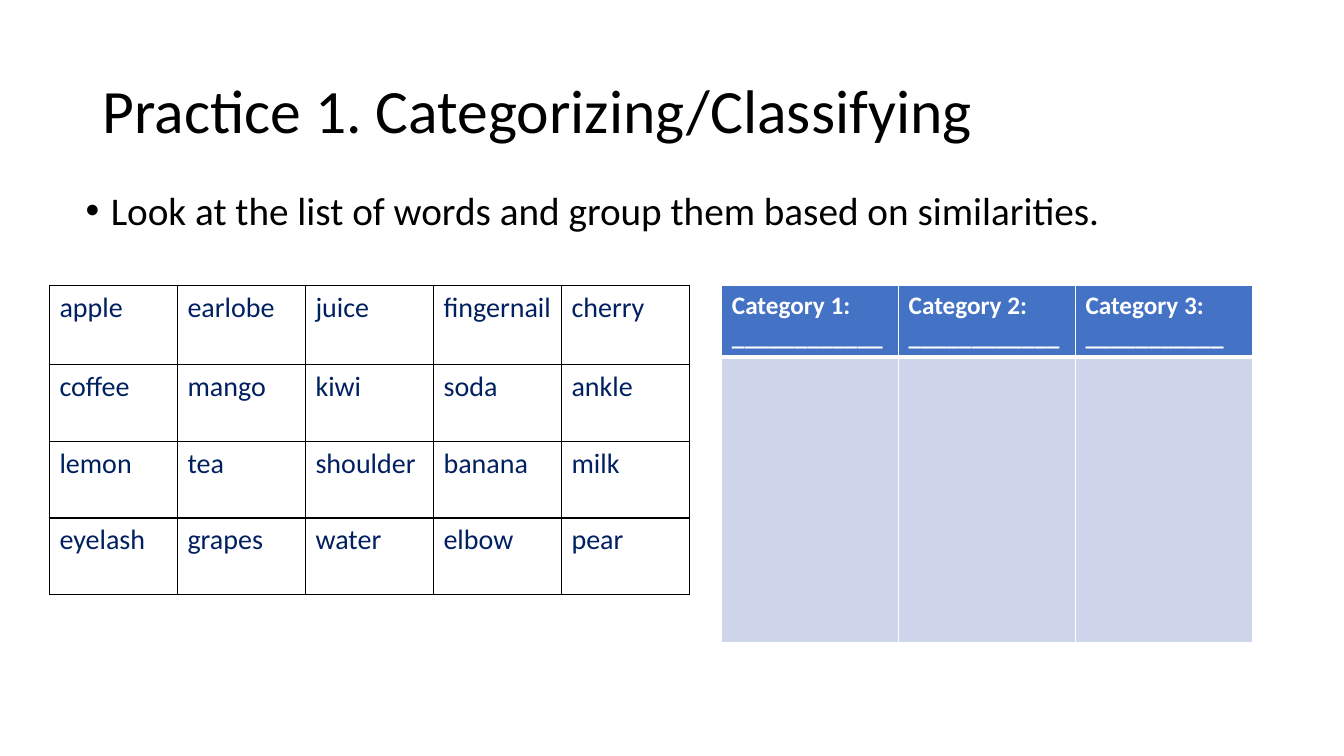
from dataclasses import dataclass

from lxml.etree import SubElement
from pptx import Presentation
from pptx.dml.color import RGBColor
from pptx.enum.text import MSO_ANCHOR
from pptx.oxml.ns import qn
from pptx.util import Inches, Pt


@dataclass(frozen=True)
class Theme:
    font: str = "Calibri"
    black: str = "000000"
    white: str = "FFFFFF"
    navy: str = "002060"
    blue: str = "4472C4"
    pale: str = "CFD5EA"
    title: int = 44
    body: int = 28
    word: int = 20
    head: int = 18


THEME = Theme()
WORDS = [
    ["apple", "earlobe", "juice", "fingernail", "cherry"],
    ["coffee", "mango", "kiwi", "soda", "ankle"],
    ["lemon", "tea", "shoulder", "banana", "milk"],
    ["eyelash", "grapes", "water", "elbow", "pear"],
]
HEADS = [
    ("Category 1:", "____________"),
    ("Category 2:", "____________"),
    ("Category 3:", "___________"),
]


def add_run(para, text, size, color, bold=False):
    run = para.add_run()
    run.text = text
    run.font.name = THEME.font
    run.font.size = Pt(size)
    run.font.bold = bold
    run.font.color.rgb = RGBColor.from_string(color)


def add_text(slide, box, text, size, anchor):
    """Add a one-paragraph text box and return its paragraph."""
    frame = slide.shapes.add_textbox(*map(Inches, box)).text_frame
    frame.word_wrap = True
    frame.vertical_anchor = anchor
    para = frame.paragraphs[0]
    para.line_spacing = 0.9
    add_run(para, text, size, THEME.black)
    return para


def add_bullet(para):
    props = para._p.get_or_add_pPr()
    props.set("marL", str(Inches(0.25)))
    props.set("indent", str(Inches(-0.25)))
    SubElement(props, qn("a:buFont"), typeface="Arial")
    SubElement(props, qn("a:buChar"), char="•")


def add_grid(slide, left, top, width, heights, count):
    """Add a table with equal columns and the given row heights."""
    frame = slide.shapes.add_table(
        len(heights), count, Inches(left), Inches(top),
        Inches(width), Inches(sum(heights)))
    table = frame.table
    table.horz_banding = False
    for col in table.columns:
        col.width = Inches(width / count)
    for row, height in zip(table.rows, heights):
        row.height = Inches(height)
    return table


def style_cell(cell, line, fill=None, top=1, bottom=1):
    """Set borders, with widths in points, and then the fill."""
    props = cell._tc.get_or_add_tcPr()
    for side, width in zip("LRTB", (1, 1, top, bottom)):
        edge = SubElement(props, qn(f"a:ln{side}"), w=str(Pt(width)))
        solid = SubElement(edge, qn("a:solidFill"))
        SubElement(solid, qn("a:srgbClr"), val=line)
    if fill:
        cell.fill.solid()
        cell.fill.fore_color.rgb = RGBColor.from_string(fill)
    else:
        cell.fill.background()


def add_words(slide):
    heights = [0.79, 0.76, 0.76, 0.76]
    table = add_grid(slide, 0.49, 2.83, 6.35, heights, len(WORDS[0]))
    for row, words in zip(table.rows, WORDS):
        for cell, word in zip(row.cells, words):
            style_cell(cell, THEME.black)
            add_run(cell.text_frame.paragraphs[0], word,
                    THEME.word, THEME.navy)


def add_groups(slide):
    table = add_grid(slide, 7.16, 2.83, 5.26, [0.71, 2.84], len(HEADS))
    for col, (label, blank) in enumerate(HEADS):
        head, body = table.cell(0, col), table.cell(1, col)
        style_cell(head, THEME.white, THEME.blue, bottom=3)
        style_cell(body, THEME.white, THEME.pale, top=3)
        frame = head.text_frame
        for para, text in ((frame.paragraphs[0], label),
                           (frame.add_paragraph(), blank)):
            add_run(para, text, THEME.head, THEME.white, bold=True)


def main():
    deck = Presentation()
    deck.slide_width, deck.slide_height = Inches(13.33), Inches(7.5)
    slide = deck.slides.add_slide(deck.slide_layouts[6])
    add_text(slide, (0.92, 0.4, 11.5, 1.45),
             "Practice 1. Categorizing/Classifying",
             THEME.title, MSO_ANCHOR.MIDDLE)
    task = add_text(
        slide, (0.75, 1.85, 10.92, 0.61),
        "Look at the list of words and group them based on similarities.",
        THEME.body, MSO_ANCHOR.TOP)
    task.space_before = Pt(10)
    add_bullet(task)
    add_words(slide)
    add_groups(slide)
    deck.save("out.pptx")


if __name__ == "__main__":
    main()
